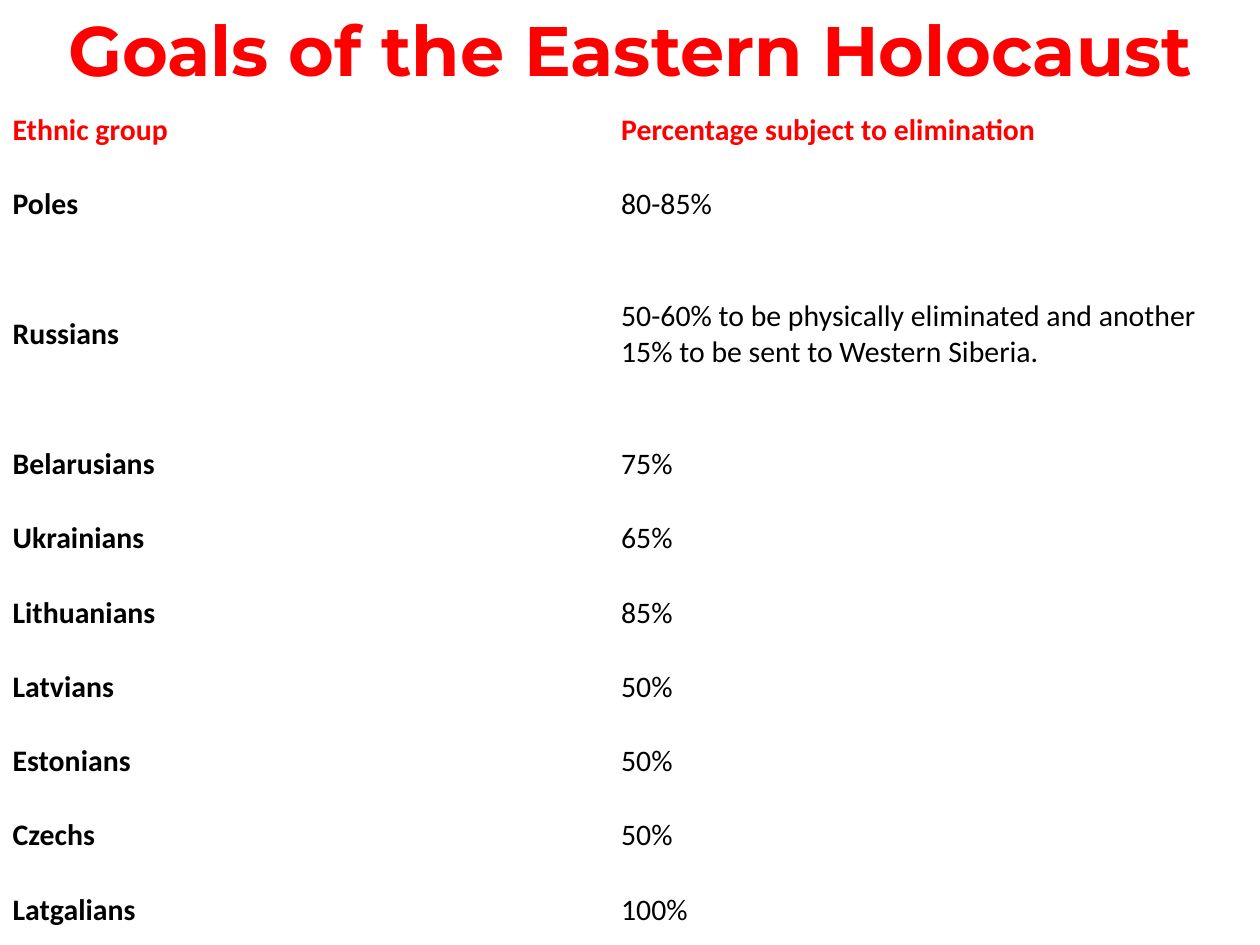
from pptx import Presentation
from pptx.dml.color import RGBColor
from pptx.enum import text
from pptx.util import Inches, Pt

RED = RGBColor(0xFF, 0, 0)
BLACK = RGBColor(0, 0, 0)

# Content
TITLE = "Goals of the Eastern Holocaust"
ROWS = [
    ("Ethnic group", "Percentage subject to elimination"),
    ("Poles", "80-85%"),
    ("Russians", "50-60% to be physically eliminated and another "
                 "15% to be sent to Western Siberia."),
    ("Belarusians", "75%"),
    ("Ukrainians", "65%"),
    ("Lithuanians", "85%"),
    ("Latvians", "50%"),
    ("Estonians", "50%"),
    ("Czechs", "50%"),
    ("Latgalians", "100%"),
]
COLS = (4.83, 4.92)
ROW_H, TALL_H = 0.59, 1.47
TALL = 2  # the Russians row


def add_run(frame, words, font, size, color, bold):
    run = frame.paragraphs[0].add_run()
    run.text = words
    run.font.name = font
    run.font.size = Pt(size)
    run.font.color.rgb = color
    run.font.bold = bold


prs = Presentation()
prs.slide_width, prs.slide_height = Inches(10), Inches(7.5)
slide = prs.slides.add_slide(prs.slide_layouts[5])

# Title
title = slide.shapes.title
title.left, title.top = Inches(0), Inches(0)
title.width, title.height = Inches(10), Inches(0.77)
frame = title.text_frame
frame.word_wrap = True
frame.auto_size = text.MSO_AUTO_SIZE.NONE
frame.vertical_anchor = text.MSO_ANCHOR.TOP
frame.paragraphs[0].alignment = text.PP_ALIGN.CENTER
add_run(frame, TITLE, "Montserrat", 40, RED, True)

# Table
heights = [TALL_H if i == TALL else ROW_H for i in range(len(ROWS))]
table = slide.shapes.add_table(
    len(ROWS), len(COLS), Inches(0), Inches(0.74),
    Inches(sum(COLS)), Inches(sum(heights))).table
table.horz_banding = False
for col, width in zip(table.columns, COLS):
    col.width = Inches(width)
for r, (row, height) in enumerate(zip(ROWS, heights)):
    table.rows[r].height = Inches(height)
    for c, words in enumerate(row):
        cell = table.cell(r, c)
        cell.fill.background()
        cell.vertical_anchor = text.MSO_ANCHOR.MIDDLE
        head = r == 0
        add_run(cell.text_frame, words, "Calibri", 17,
                RED if head else BLACK, head or c == 0)

prs.save("out.pptx")
